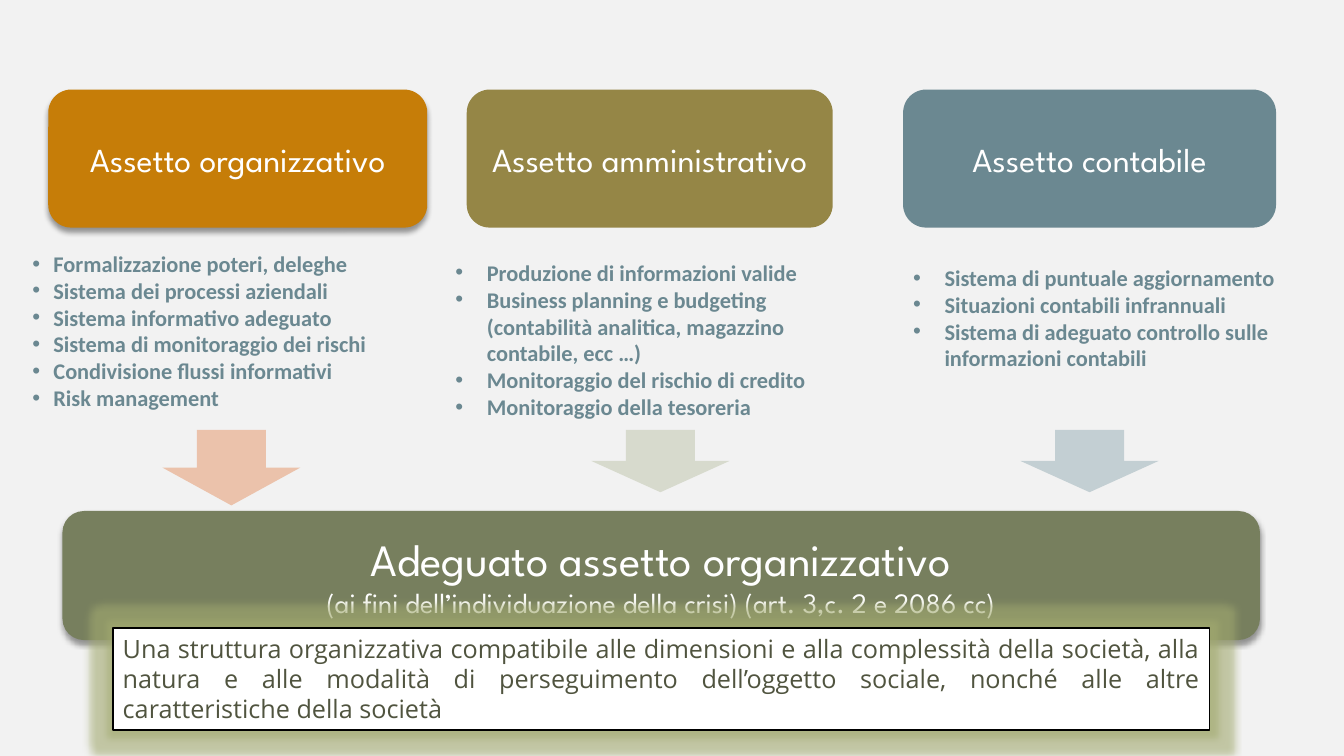
from lxml import etree
from pptx import Presentation
from pptx.dml.color import RGBColor
from pptx.enum.shapes import MSO_SHAPE
from pptx.enum.text import MSO_ANCHOR, PP_ALIGN
from pptx.oxml.ns import qn
from pptx.util import Pt

ROUNDED, RECTANGLE, ARROW = MSO_SHAPE.ROUNDED_RECTANGLE, MSO_SHAPE.RECTANGLE, MSO_SHAPE.RIGHT_ARROW
TOP, MIDDLE = MSO_ANCHOR.TOP, MSO_ANCHOR.MIDDLE
CENTER, JUSTIFY = PP_ALIGN.CENTER, PP_ALIGN.JUSTIFY

BACKGROUND = RGBColor(0xF2, 0xF2, 0xF2)
WHITE = RGBColor(0xFF, 0xFF, 0xFF)
BLACK = RGBColor(0, 0, 0)
ORANGE = RGBColor(0xC6, 0x7D, 0x08)
OLIVE = RGBColor(0x95, 0x86, 0x46)
TEAL = RGBColor(0x6B, 0x88, 0x91)
SAGE = RGBColor(0x77, 0x7F, 0x5E)
PEACH = RGBColor(0xEB, 0xC2, 0xAB)
PALE_SAGE = RGBColor(0xD7, 0xDA, 0xCD)
PALE_TEAL = RGBColor(0xC3, 0xCF, 0xD3)
DARK_GREEN = RGBColor(0x50, 0x54, 0x3F)
GLOW = RGBColor(0xA2, 0xAA, 0x70)

HEADING_FONT, LIST_FONT, NOTE_FONT = "League Spartan", "Calibri", "Open Sans"

COLUMNS = [
    {"title": "Assetto organizzativo", "color": ORANGE, "card": (34.5, 270.7), "shadow": True,
     "list_box": (8.6, 175, 325.4, 123.8), "hanging": 15, "arrow": (PEACH, 54),
     "items": ["Formalizzazione poteri, deleghe", "Sistema dei processi aziendali",
               "Sistema informativo adeguato", "Sistema di monitoraggio dei rischi",
               "Condivisione flussi informativi", "Risk management"]},
    {"title": "Assetto amministrativo", "color": OLIVE, "card": (333.4, 261.4), "shadow": False,
     "list_box": (318.2, 181.4, 307.4, 123.8), "hanging": 22.5, "arrow": (PALE_SAGE, 44.6),
     "items": ["Produzione di informazioni valide",
               "Business planning e budgeting (contabilità analitica, magazzino contabile, ecc …)",
               "Monitoraggio del rischio di credito", "Monitoraggio della tesoreria"]},
    {"title": "Assetto contabile", "color": TEAL, "card": (645.1, 266.4), "shadow": False,
     "list_box": (645.1, 185, 306.7, 85), "hanging": 22.5, "arrow": (PALE_TEAL, 44.6),
     "items": ["Sistema di puntuale aggiornamento", "Situazioni contabili infrannuali",
               "Sistema di adeguato controllo sulle informazioni contabili"]},
]
RESULT = [("Adeguato assetto organizzativo", 32),
          ("(ai fini dell’individuazione della crisi) (art. 3,c. 2 e 2086 cc)", 20)]
NOTE = ("Una struttura organizzativa compatibile alle dimensioni e alla complessità della società, "
        "alla natura e alle modalità di perseguimento dell’oggetto sociale, nonché alle altre "
        "caratteristiche della società")

CARD_TOP, CARD_HEIGHT = 64, 98.6
ARROW_CENTER, ARROW_STEP, ARROW_TOP, ARROW_WIDTH = 165.25, 306.5, 307, 98.6
LIST_INDENT = 22.5


def add_block(slide, kind, box, color):
    shape = slide.shapes.add_shape(kind, *map(Pt, box))
    shape.fill.solid()
    shape.fill.fore_color.rgb = color
    shape.line.fill.background()
    shape.shadow.inherit = False
    return shape


def add_effect(shape, name, color, alpha, **attributes):
    effects = shape._element.spPr.find(qn("a:effectLst"))
    effect = etree.SubElement(effects, qn(name), {key: str(value) for key, value in attributes.items()})
    fill = etree.SubElement(effect, qn("a:srgbClr"), val=str(color))
    etree.SubElement(fill, qn("a:alpha"), val=str(alpha * 1000))


def add_shadow(shape):
    add_effect(shape, "a:outerShdw", BLACK, 40, blurRad=Pt(4), dist=Pt(3), dir=90 * 60000, rotWithShape=0)


def write(shape, lines, font_name, color, alignment=None, anchor=TOP, bold=False, hanging=None):
    frame = shape.text_frame
    frame.word_wrap = True
    frame.vertical_anchor = anchor
    for index, (text, size) in enumerate(lines):
        paragraph = frame.add_paragraph() if index else frame.paragraphs[0]
        paragraph.text = text
        paragraph.alignment = alignment
        if hanging:
            properties = paragraph._p.get_or_add_pPr()
            properties.set("marL", str(Pt(LIST_INDENT)))
            properties.set("indent", str(-Pt(hanging)))
            etree.SubElement(properties, qn("a:buFont"), typeface="Arial")
            etree.SubElement(properties, qn("a:buChar"), char="•")
        font = paragraph.font
        font.name, font.size, font.bold = font_name, Pt(size), bold
        font.color.rgb = color


def main():
    presentation = Presentation()
    presentation.slide_width, presentation.slide_height = Pt(960), Pt(540)
    slide = presentation.slides.add_slide(presentation.slide_layouts[6])
    slide.background.fill.solid()
    slide.background.fill.fore_color.rgb = BACKGROUND

    for column in COLUMNS:
        left, width = column["card"]
        card = add_block(slide, ROUNDED, (left, CARD_TOP, width, CARD_HEIGHT), column["color"])
        if column["shadow"]:
            add_shadow(card)
        write(card, [(column["title"], 24)], HEADING_FONT, WHITE, CENTER, MIDDLE)

    for column in COLUMNS:
        list_box = slide.shapes.add_textbox(*map(Pt, column["list_box"]))
        write(list_box, [(item, 16) for item in column["items"]], LIST_FONT, TEAL,
              bold=True, hanging=column["hanging"])

    result = add_block(slide, ROUNDED, (44.6, 365, 855.4, 92.2), SAGE)
    add_shadow(result)
    write(result, RESULT, HEADING_FONT, WHITE, CENTER, MIDDLE)

    for index, column in enumerate(COLUMNS):
        color, length = column["arrow"]
        center_x = ARROW_CENTER + index * ARROW_STEP
        center_y = ARROW_TOP + length / 2
        box = (center_x - length / 2, center_y - ARROW_WIDTH / 2, length, ARROW_WIDTH)
        add_block(slide, ARROW, box, color).rotation = 90

    note = add_block(slide, RECTANGLE, (80.6, 448.6, 783.4, 72.7), WHITE)
    note.line.color.rgb = BLACK
    note.line.width = Pt(1)
    add_effect(note, "a:glow", GLOW, 60, rad=Pt(11))
    write(note, [(NOTE, 18)], NOTE_FONT, DARK_GREEN, JUSTIFY)

    presentation.save("out.pptx")


if __name__ == "__main__":
    main()
